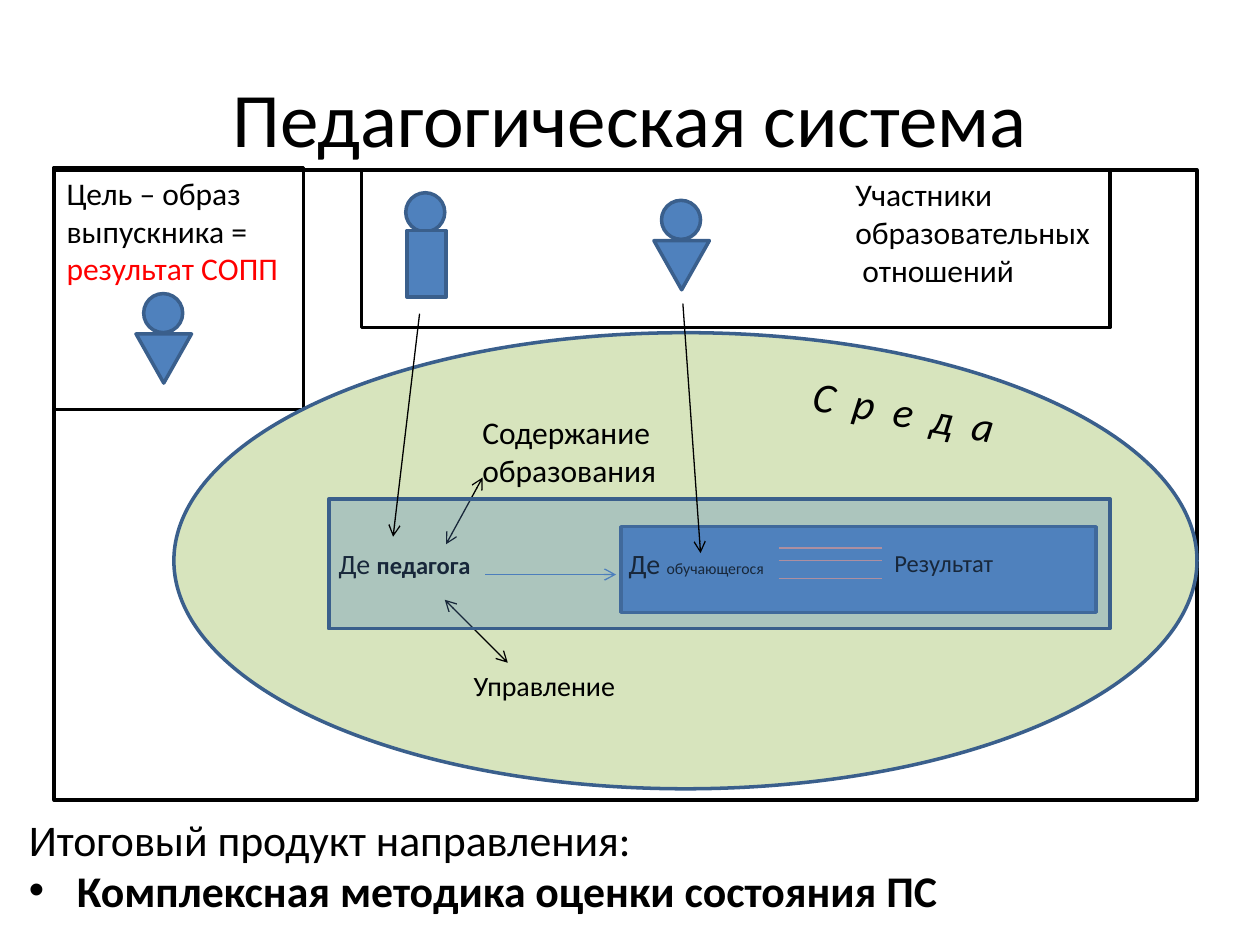
from lxml import etree
from pptx import Presentation
from pptx.dml.color import RGBColor
from pptx.enum.shapes import MSO_CONNECTOR, MSO_SHAPE
from pptx.enum.text import MSO_ANCHOR, MSO_AUTO_SIZE, PP_ALIGN
from pptx.oxml.ns import qn
from pptx.util import Inches, Pt

# Content: places are columns and rows of a 100 x 75 grid
COLUMNS, ROWS = 100, 75
BLACK, RED, WHITE = "000000", "FF0000", "FFFFFF"
BLUE, EDGE, GREEN = "4F81BD", "3A5F8C", "D7E4BD"
ARROW_BLUE, PINK = "4B7EBC", "D99694"

TITLE = "Педагогическая система"
GOAL = [[("Цель – образ выпускника = ", {}), ("результат СОПП", {"color": RED})]]
PARTICIPANTS = [[("Участники образовательных", {})], [(" отношений", {})]]
CONTENT = [[("Содержание образования", {})]]
MANAGEMENT = [[("Управление", {})]]
ENVIRONMENT = [[("С  р  е  д  а", {"italic": True})]]
TEACHER_WORK = [[("Де ", {}), ("педагога", {"size": 14, "bold": True})]]
LEARNER_WORK = [[("Де ", {}), ("обучающегося", {"size": 9})]]
RESULT = [[("Результат", {})]]
PRODUCT = [[("Итоговый продукт направления:", {})],
           [("Комплексная методика оценки состояния ПС", {"bold": True})]]

TWO_WAY_ARROWS = [(38.3, 37.9, 35.4, 43.2), (35.3, 47.6, 40.3, 52.6)]
PARTICIPANT_ARROWS = [(33.3, 24.9, 31.2, 42.6), (54.2, 24.1, 55.6, 43.9)]
RESULT_LINE_ROWS = [43.5, 44.5, 45.9]

prs = Presentation()
prs.slide_width, prs.slide_height = Inches(10), Inches(7.5)
slide = prs.slides.add_slide(prs.slide_layouts[1])


def grid(*values):
    """Turn alternating columns and rows into slide lengths."""
    units = (prs.slide_width / COLUMNS, prs.slide_height / ROWS)
    return [round(value * units[i % 2]) for i, value in enumerate(values)]


def rgb(value):
    return RGBColor.from_string(value)


def write(frame, paragraphs, size=18, color=BLACK, align=PP_ALIGN.LEFT,
          anchor=MSO_ANCHOR.TOP, wrap=True):
    frame.word_wrap = wrap
    frame.auto_size = MSO_AUTO_SIZE.NONE
    frame.vertical_anchor = anchor
    for i, runs in enumerate(paragraphs):
        paragraph = frame.paragraphs[0] if i == 0 else frame.add_paragraph()
        paragraph.alignment = align
        for text, style in runs:
            run = paragraph.add_run()
            run.text = text
            run.font.name = "Calibri"
            run.font.size = Pt(style.get("size", size))
            run.font.bold = style.get("bold", False)
            run.font.italic = style.get("italic", False)
            run.font.color.rgb = rgb(style.get("color", color))


def label(place, paragraphs, rotation=0, **style):
    box = slide.shapes.add_textbox(*grid(*place))
    box.rotation = rotation
    write(box.text_frame, paragraphs, **style)
    return box


def block(kind, place, fill=None, line=EDGE, opacity=100):
    shape = slide.shapes.add_shape(kind, *grid(*place))
    shape.shadow.inherit = False
    shape.line.color.rgb = rgb(line)
    shape.line.width = Pt(2)
    if fill is None:
        shape.fill.background()
        return shape
    shape.fill.solid()
    shape.fill.fore_color.rgb = rgb(fill)
    if opacity < 100:
        color = shape.fill._xPr.find(qn("a:solidFill"))[0]
        etree.SubElement(color, qn("a:alpha"), val=str(opacity * 1000))
    return shape


def connect(ends, color=BLACK, heads=("tailEnd",)):
    line = slide.shapes.add_connector(MSO_CONNECTOR.STRAIGHT, *grid(*ends))
    line.line.color.rgb = rgb(color)
    line.line.width = Pt(0.75)
    for head in heads:
        etree.SubElement(line.line._get_or_add_ln(), qn("a:" + head), type="arrow")
    etree.SubElement(line._element.spPr, qn("a:effectLst"))
    return line


def person(x, y, kind, body):
    """Round head with a body given relative to the head's corner."""
    block(MSO_SHAPE.OVAL, (x, y, 3.1, 3.1), BLUE)
    dx, dy, width, height = body
    block(kind, (x + dx, y + dy, width, height), BLUE)


def learner(x, y):
    person(x, y, MSO_SHAPE.FLOWCHART_MERGE, (-0.6, 3.2, 4.4, 3.9))


def teacher(x, y):
    person(x, y, MSO_SHAPE.RECTANGLE, (0.1, 3, 3.1, 5.3))


# Title
title = slide.shapes.title
title.left, title.top, title.width, title.height = grid(5, 3, 90, 12.5)
write(title.text_frame, [[(TITLE, {})]], size=44, align=PP_ALIGN.CENTER,
      anchor=MSO_ANCHOR.MIDDLE)

# Goal and outer frame
goal = block(MSO_SHAPE.RECTANGLE, (4.3, 13.3, 19.8, 19.2), WHITE, BLACK)
write(goal.text_frame, GOAL)
learner(11.4, 23.3)
block(MSO_SHAPE.RECTANGLE, (4.3, 13.5, 90.7, 50), line=BLACK)

# Environment
block(MSO_SHAPE.OVAL, (13.8, 26.4, 81.2, 36.2), GREEN)
label((37.3, 32.3, 16.6, 6.4), CONTENT)
label((36.6, 52.6, 14.8, 3.4), MANAGEMENT, size=16)
label((63.6, 30.4, 20, 3.5), ENVIRONMENT, rotation=10.3, size=24)
for ends in TWO_WAY_ARROWS:
    connect(ends, heads=("headEnd", "tailEnd"))

# Activities of teacher and learner, under a translucent panel
teacher_work = label((25.9, 42.9, 12.6, 5.4), TEACHER_WORK, size=16)
work_arrow = connect((38.5, 45.6, 48.9, 45.6), ARROW_BLUE)
block(MSO_SHAPE.RECTANGLE, (49.3, 41.8, 37.7, 6.8), BLUE)
learner_work = label((48.9, 42.9, 14.7, 5.4), LEARNER_WORK, size=16)
work_arrow.begin_connect(teacher_work, 3)
work_arrow.end_connect(learner_work, 1)
label((70, 43, 16.6, 2.9), RESULT, size=14)
for row in RESULT_LINE_ROWS:
    connect((61.8, row, 70, row), PINK, heads=())
block(MSO_SHAPE.RECTANGLE, (26.1, 39.6, 62, 10.3), BLUE, opacity=31)

# Participants
for ends in PARTICIPANT_ARROWS:
    connect(ends)
learner(52.5, 15.9)
teacher(32.2, 15.3)
block(MSO_SHAPE.RECTANGLE, (28.7, 13.5, 59.4, 12.5), line=BLACK)
label((66.9, 13.4, 22.9, 10.1), PARTICIPANTS)

# Final product
product = slide.placeholders[1]
product.left, product.top, product.width, product.height = grid(1.3, 64.8, 74.8, 8.6)
write(product.text_frame, PRODUCT, size=25, wrap=False)
for paragraph, bullet in zip(product.text_frame.paragraphs, (None, "•")):
    paragraph.line_spacing = 0.8
    paragraph.space_before = Pt(5)
    properties = paragraph._p.get_or_add_pPr()
    indent = Inches(0.38) if bullet else 0
    properties.set("marL", str(indent))
    properties.set("indent", str(-indent))
    if bullet:
        etree.SubElement(properties, qn("a:buFont"), typeface="Arial")
        etree.SubElement(properties, qn("a:buChar"), char=bullet)
    else:
        etree.SubElement(properties, qn("a:buNone"))

prs.save("out.pptx")
